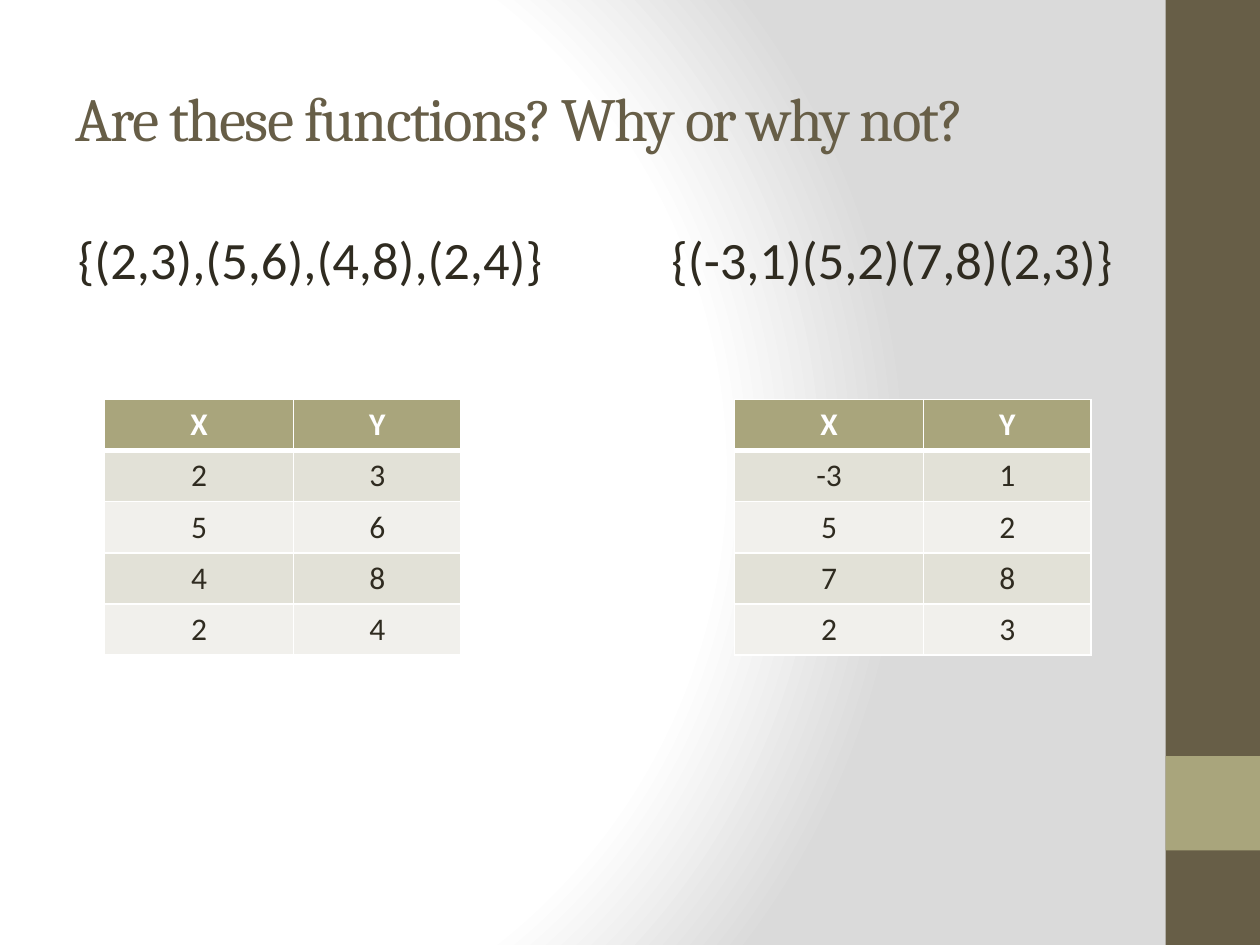
from dataclasses import dataclass

from pptx import Presentation
from pptx.dml.color import RGBColor
from pptx.enum.shapes import MSO_SHAPE
from pptx.enum.text import MSO_ANCHOR, PP_ALIGN
from pptx.oxml import parse_xml
from pptx.oxml.ns import nsdecls
from pptx.util import Inches, Pt

COLORS = {
    "white": "FFFFFF",
    "gray": "DADADA",
    "brown": "675E47",
    "olive": "A9A57C",
    "text": "2F2B20",
    "band_dark": "E2E1D7",
    "band_light": "F1F0EC",
}
TABLE_TOP, TABLE_HEIGHT = 3.17, 2.03
COLUMN_WIDTHS = (1.5, 1.33)


@dataclass
class Bar:
    top: float
    height: float
    color: str


@dataclass
class Relation:
    left: float
    pairs: list[tuple[int, int]]


BARS = [Bar(0, 7.5, "brown"), Bar(6, 0.75, "olive")]
RELATIONS = [
    Relation(0.83, [(2, 3), (5, 6), (4, 8), (2, 4)]),
    Relation(5.83, [(-3, 1), (5, 2), (7, 8), (2, 3)]),
]


def rgb(name: str) -> RGBColor:
    return RGBColor.from_string(COLORS[name])


def style(p, font: str, size: float, color: str, bold: bool = False) -> None:
    p.font.name, p.font.size, p.font.bold = font, Pt(size), bold
    p.font.color.rgb = rgb(color)


def set_background(s) -> None:
    """Radial gradient centred left of the middle."""
    stops = "".join(
        f'<a:gs pos="{pos * 1000}"><a:srgbClr val="{COLORS[color]}"/></a:gs>'
        for pos, color in ((0, "white"), (75, "white"), (100, "gray"))
    )
    s.element.cSld.insert(0, parse_xml(
        f'<p:bg {nsdecls("p", "a")}><p:bgPr><a:gradFill rotWithShape="1">'
        f'<a:gsLst>{stops}</a:gsLst><a:path path="circle">'
        '<a:fillToRect l="20000" t="50000" r="100000" b="50000"/></a:path>'
        '</a:gradFill><a:effectLst/></p:bgPr></p:bg>'))


def add_bar(s, bar: Bar) -> None:
    sp = s.shapes.add_shape(MSO_SHAPE.RECTANGLE, Inches(9.25), Inches(bar.top),
                            Inches(0.75), Inches(bar.height))
    sp.shadow.inherit = False
    sp.fill.solid()
    sp.fill.fore_color.rgb = rgb(bar.color)
    sp.line.fill.background()


def set_borders(cell, top: float, bottom: float) -> None:
    tcPr = cell._tc.get_or_add_tcPr()
    for side, width in (("L", 1), ("R", 1), ("T", top), ("B", bottom)):
        tcPr.append(parse_xml(
            f'<a:ln{side} {nsdecls("a")} w="{Pt(width)}"><a:solidFill>'
            f'<a:srgbClr val="{COLORS["white"]}"/></a:solidFill></a:ln{side}>'))


def add_relation_table(s, relation: Relation) -> None:
    rows = [("X", "Y"), *relation.pairs]
    table = s.shapes.add_table(
        len(rows), len(COLUMN_WIDTHS), Inches(relation.left), Inches(TABLE_TOP),
        Inches(sum(COLUMN_WIDTHS)), Inches(TABLE_HEIGHT)).table
    for column, width in zip(table.columns, COLUMN_WIDTHS):
        column.width = Inches(width)
    for i, row in enumerate(rows):
        header = i == 0
        fill = "olive" if header else "band_dark" if i % 2 else "band_light"
        for j, value in enumerate(row):
            cell = table.cell(i, j)
            cell.text = str(value)
            p = cell.text_frame.paragraphs[0]
            p.alignment = PP_ALIGN.CENTER
            style(p, "Calibri", 18, "white" if header else "text", header)
            set_borders(cell, top=3 if i == 1 else 1, bottom=3 if header else 1)
            cell.fill.solid()
            cell.fill.fore_color.rgb = rgb(fill)


def add_title(s, text: str) -> None:
    title = s.shapes.title
    title.left, title.top = Inches(0.5), Inches(0.3)
    title.width, title.height = Inches(8.33), Inches(1.25)
    tf = title.text_frame
    tf.text = text
    tf.vertical_anchor = MSO_ANCHOR.MIDDLE
    p = tf.paragraphs[0]
    p.alignment = PP_ALIGN.LEFT
    style(p, "Cambria", 35, "brown")
    p.runs[0].font._element.set("spc", "-100")


def add_sets(s, text: str) -> None:
    """One line holding both sets, the second placed by a tab stop."""
    tf = s.shapes.add_textbox(Inches(0.52), Inches(1.75),
                              Inches(8.65), Inches(0.61)).text_frame
    tf.word_wrap = True
    tf.text = text
    p = tf.paragraphs[0]
    p._p.get_or_add_pPr().append(parse_xml(
        f'<a:tabLst {nsdecls("a")}><a:tab pos="{Inches(4.71)}" algn="l"/></a:tabLst>'))
    style(p, "Calibri", 30, "text")


def main() -> None:
    prs = Presentation()
    prs.slide_width, prs.slide_height = Inches(10), Inches(7.5)
    s = prs.slides.add_slide(prs.slide_layouts[5])
    set_background(s)
    for bar in BARS:
        add_bar(s, bar)
    add_title(s, "Are these functions? Why or why not?")
    add_sets(s, "{(2,3),(5,6),(4,8),(2,4)}\t{(-3,1)(5,2)(7,8)(2,3)}")
    for relation in RELATIONS:
        add_relation_table(s, relation)
    prs.save("out.pptx")


if __name__ == "__main__":
    main()
